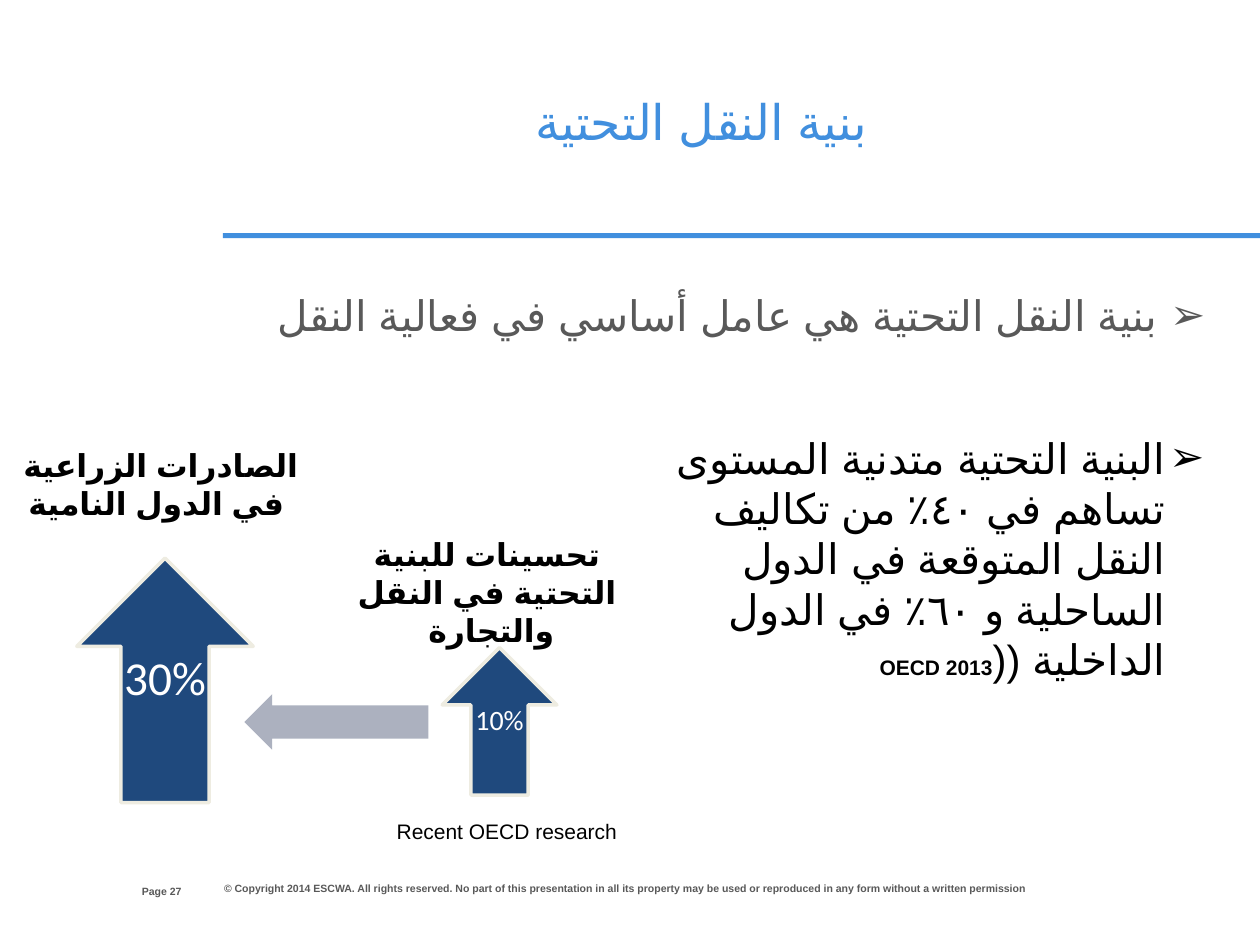
"""Build the transport infrastructure slide."""
import pptx
import pptx.dml.color
import pptx.enum.lang
import pptx.enum.shapes
import pptx.enum.text
import pptx.oxml.ns
import pptx.util
from lxml import etree

Inches = pptx.util.Inches
Pt = pptx.util.Pt
RGBColor = pptx.dml.color.RGBColor
MSO_SHAPE = pptx.enum.shapes.MSO_SHAPE
ALIGN = pptx.enum.text.PP_ALIGN
ANCHOR = pptx.enum.text.MSO_ANCHOR
ARABIC = pptx.enum.lang.MSO_LANGUAGE_ID.ARABIC
qn = pptx.oxml.ns.qn

BLUE = RGBColor(0x41, 0x8F, 0xDE)
NAVY = RGBColor(0x1F, 0x49, 0x7D)
CREAM = RGBColor(0xEE, 0xEC, 0xE1)
SILVER = RGBColor(0xAC, 0xB1, 0xBF)
GREY = RGBColor(0x59, 0x59, 0x59)
BLACK = RGBColor(0, 0, 0)
WHITE = RGBColor(0xFF, 0xFF, 0xFF)


def write(sp, box, runs, color, para, rtl=False, bullet=None, indent=0, inset=None, anchor=ANCHOR.TOP):
    sp.left, sp.top, sp.width, sp.height = [Inches(v) for v in box]
    tf = sp.text_frame
    frame = {"word_wrap": True, "auto_size": pptx.enum.text.MSO_AUTO_SIZE.NONE, "vertical_anchor": anchor}
    if inset is not None:
        frame.update({f"margin_{side}": Inches(inset) for side in ("left", "top", "right", "bottom")})
    for name, value in frame.items():
        setattr(tf, name, value)
    p = tf.paragraphs[0]
    for name, value in para.items():
        setattr(p, name, value)
    pPr = p._p.get_or_add_pPr()
    if rtl:
        pPr.set("rtl", "1")
    if indent:
        pPr.set("marL", str(Inches(indent)))
    if bullet:
        pPr.set("marR", "0")
        pPr.set("indent", str(-Inches(indent)))
        etree.SubElement(pPr, qn("a:buFont")).set("typeface", "Arial")
        etree.SubElement(pPr, qn("a:buChar")).set("char", bullet)
    for text, size, bold, font in runs:
        r = p.add_run()
        r.text = text
        r.font.color.rgb = color
        for name, value in {"size": Pt(size), "bold": bold, "name": font}.items():
            setattr(r.font, name, value)
        if not text.isascii():
            r.font.language_id = ARABIC
            etree.SubElement(r._r.get_or_add_rPr(), qn("a:cs")).set("typeface", font)


def add_block(shape, box, fill, line=None):
    sp = s.shapes.add_shape(shape, *[Inches(v) for v in box])
    sp.shadow.inherit = False
    sp.fill.solid()
    sp.fill.fore_color.rgb = fill
    if line is None:
        sp.line.fill.background()
    else:
        sp.line.color.rgb = line
        sp.line.width = Pt(2)
    return sp


prs = pptx.Presentation()
prs.slide_width, prs.slide_height = Inches(10), Inches(7.5)
s = prs.slides.add_slide(prs.slide_layouts[1])
title, body = s.placeholders

add_block(MSO_SHAPE.RECTANGLE, (1.77, 1.85, 8.23, 0.04), BLUE)
write(title, (1.77, 0.73, 7.59, 0.45), [("بنية النقل التحتية", 28, False, "Arial")], BLUE,
      {"alignment": ALIGN.CENTER, "space_before": Pt(5.6)}, inset=0)
write(body, (1.77, 1.92, 8.23, 1.16),
      [("بنية النقل التحتية هي عامل أساسي في فعالية النقل", 24, False, "Arial")], GREY,
      {"alignment": ALIGN.CENTER, "space_before": Pt(4.8)},
      rtl=True, bullet="➢", indent=0.38, inset=0, anchor=ANCHOR.MIDDLE)

add_block(MSO_SHAPE.LEFT_ARROW, (1.94, 5.51, 1.46, 0.44), SILVER).adjustments[0] = 0.6
for box, text, size, inset in (
    ((0.61, 4.43, 1.4, 1.94), "30%", 27, 0.02),
    ((3.51, 5.14, 0.91, 1.17), "10%", 16, 0.03),
):
    add_block(MSO_SHAPE.UP_ARROW, box, NAVY, CREAM)
    write(s.shapes.add_textbox(0, 0, 0, 0), box, [(text, size, False, "Calibri")], WHITE,
          {"alignment": ALIGN.CENTER, "line_spacing": 0.9, "space_after": Pt(round(size * 0.35, 1))},
          inset=inset, anchor=ANCHOR.MIDDLE)

center, left, right = [{"alignment": a} for a in (ALIGN.CENTER, ALIGN.LEFT, ALIGN.RIGHT)]
texts = [
    ((0.75, 7.02, 0.69, 0.11), [("Page 27", 6, True, "Arial")], GREY, right, {"inset": 0}),
    ((1.68, 6.95, 7.74, 0.21),
     [("© Copyright 2014 ESCWA. All rights reserved. No part of this presentation in all its property "
       "may be used or reproduced in any form without a written permission", 6, True, "Arial")],
     GREY, left, {}),
    ((2.67, 6.45, 3.22, 0.3), [("Recent OECD research", 12, False, "Arial")], BLACK,
     {"alignment": ALIGN.LEFT, "space_before": Pt(2.4)}, {"indent": 0.38}),
    ((0, 3.49, 2.55, 0.71), [("الصادرات الزراعية في الدول النامية ", 18, True, "Arial")],
     BLACK, center, {}),
    ((2.71, 4.2, 2.31, 0.71), [("تحسينات للبنية التحتية في النقل والتجارة ", 18, True, "Arial")],
     BLACK, center, {"rtl": True}),
    ((5.02, 3.38, 4.64, 1.72),
     [("البنية التحتية متدنية المستوى تساهم في ٤٠٪ من تكاليف النقل المتوقعة "
       "في الدول الساحلية و ٦٠٪ في الدول الداخلية ((", 24, False, "Arial"),
      ("OECD 2013", 12, True, "Arial")],
     BLACK, right, {"rtl": True, "bullet": "➢", "indent": 0.31}),
]
for box, runs, color, para, options in texts:
    write(s.shapes.add_textbox(0, 0, 0, 0), box, runs, color, para, **options)

prs.save("out.pptx")
